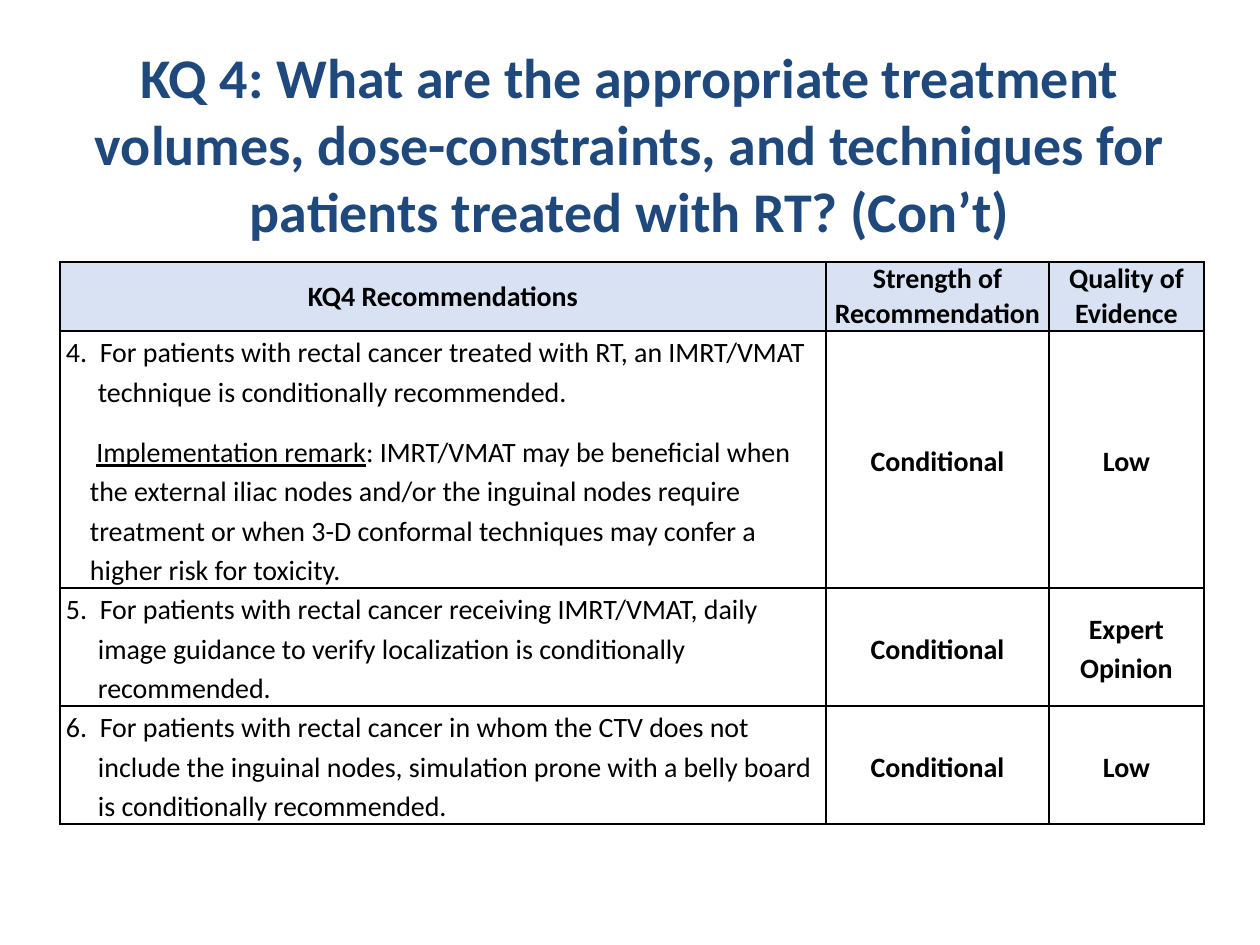
from lxml import etree
from pptx import Presentation
from pptx import util as u
from pptx.dml.color import RGBColor
from pptx.enum import text
from pptx.oxml.ns import qn

PX = 914400 / 126
FONT = "Calibri"
NAVY, BLACK, PALE_BLUE = "1F497D", "000000", "D9E2F3"

TITLE = ("KQ 4: What are the appropriate treatment volumes, dose-constraints, "
         "and techniques for patients treated with RT? (Con’t)")
HEADERS = ["KQ4 Recommendations", "Strength of Recommendation", "Quality of Evidence"]
# Each row: recommendation, strength, quality
RECOMMENDATIONS = [
    ("4.  For patients with rectal cancer treated with RT, an IMRT/VMAT technique "
     "is conditionally recommended.", "Conditional", "Low"),
    ("5.  For patients with rectal cancer receiving IMRT/VMAT, daily image guidance "
     "to verify localization is conditionally recommended.", "Conditional", "Expert Opinion"),
    ("6.  For patients with rectal cancer in whom the CTV does not include the inguinal "
     "nodes, simulation prone with a belly board is conditionally recommended.",
     "Conditional", "Low"),
]
REMARK_LABEL = "Implementation remark"
REMARK = (": IMRT/VMAT may be beneficial when the external iliac nodes and/or the inguinal "
          "nodes require treatment or when 3-D conformal techniques may confer a higher "
          "risk for toxicity.")
COLUMN_WIDTHS = [766, 223, 155]
ROW_HEIGHTS = [69, 257, 118, 118]


def px(length):
    return u.Emu(round(length * PX))


def color(value):
    return RGBColor.from_string(value)


def add_run(paragraph, words, size=16, bold=False, underline=False, fill=BLACK):
    run = paragraph.add_run()
    run.text = words
    font = run.font
    font.name, font.size, font.bold = FONT, u.Pt(size), bold
    font.color.rgb = color(fill)
    if underline:
        font.underline = True


def set_indent(paragraph, left, first=0):
    properties = paragraph._p.get_or_add_pPr()
    properties.set("marL", str(px(left)))
    properties.set("indent", str(px(first)))


def add_title(slide):
    box = slide.shapes.add_textbox(px(63), px(32), px(1134), px(157))
    frame = box.text_frame
    frame.word_wrap = True
    frame.margin_top = px(10)
    paragraph = frame.paragraphs[0]
    paragraph.alignment = text.PP_ALIGN.CENTER
    add_run(paragraph, TITLE, size=32, bold=True, fill=NAVY)


def style_cell(cell, fill=None):
    cell.margin_left = cell.margin_right = px(6)
    cell.margin_top = cell.margin_bottom = 0
    # Borders come before the fill in the cell properties
    properties = cell._tc.get_or_add_tcPr()
    for side in ("a:lnL", "a:lnR", "a:lnT", "a:lnB"):
        line = etree.SubElement(properties, qn(side), w=str(u.Pt(1)))
        solid = etree.SubElement(line, qn("a:solidFill"))
        etree.SubElement(solid, qn("a:srgbClr"), val=BLACK)
    if fill:
        cell.fill.solid()
        cell.fill.fore_color.rgb = color(fill)
    else:
        cell.fill.background()


def fill_centered(cell, words, fill=None, spacing=None):
    style_cell(cell, fill)
    cell.vertical_anchor = text.MSO_ANCHOR.MIDDLE
    paragraph = cell.text_frame.paragraphs[0]
    paragraph.alignment = text.PP_ALIGN.CENTER
    paragraph.line_spacing = spacing
    add_run(paragraph, words, bold=True)


def fill_recommendation(cell, words):
    style_cell(cell)
    paragraph = cell.text_frame.paragraphs[0]
    set_indent(paragraph, 32, -32)
    paragraph.line_spacing = 1.15
    add_run(paragraph, words)


def add_remark(cell):
    cell.text_frame.paragraphs[0].space_after = u.Pt(12)
    paragraph = cell.text_frame.add_paragraph()
    set_indent(paragraph, 24)
    paragraph.line_spacing = 1.15
    add_run(paragraph, " ", bold=True)
    add_run(paragraph, REMARK_LABEL, underline=True)
    add_run(paragraph, REMARK)


def add_recommendation_table(slide):
    frame = slide.shapes.add_table(len(ROW_HEIGHTS), len(COLUMN_WIDTHS), px(60), px(262),
                                   px(sum(COLUMN_WIDTHS)), px(sum(ROW_HEIGHTS)))
    table = frame.table
    table.horz_banding = False
    for column, width in zip(table.columns, COLUMN_WIDTHS):
        column.width = px(width)
    for row, height in zip(table.rows, ROW_HEIGHTS):
        row.height = px(height)

    # Header row
    for index, words in enumerate(HEADERS):
        fill_centered(table.cell(0, index), words, PALE_BLUE)

    # Recommendation rows
    for index, (words, strength, quality) in enumerate(RECOMMENDATIONS, 1):
        fill_recommendation(table.cell(index, 0), words)
        fill_centered(table.cell(index, 1), strength, spacing=1.15)
        fill_centered(table.cell(index, 2), quality, spacing=1.15)
    add_remark(table.cell(1, 0))


def main():
    presentation = Presentation()
    presentation.slide_width, presentation.slide_height = px(1260), px(945)
    slide = presentation.slides.add_slide(presentation.slide_layouts[6])
    add_title(slide)
    add_recommendation_table(slide)
    presentation.save("out.pptx")


if __name__ == "__main__":
    main()
